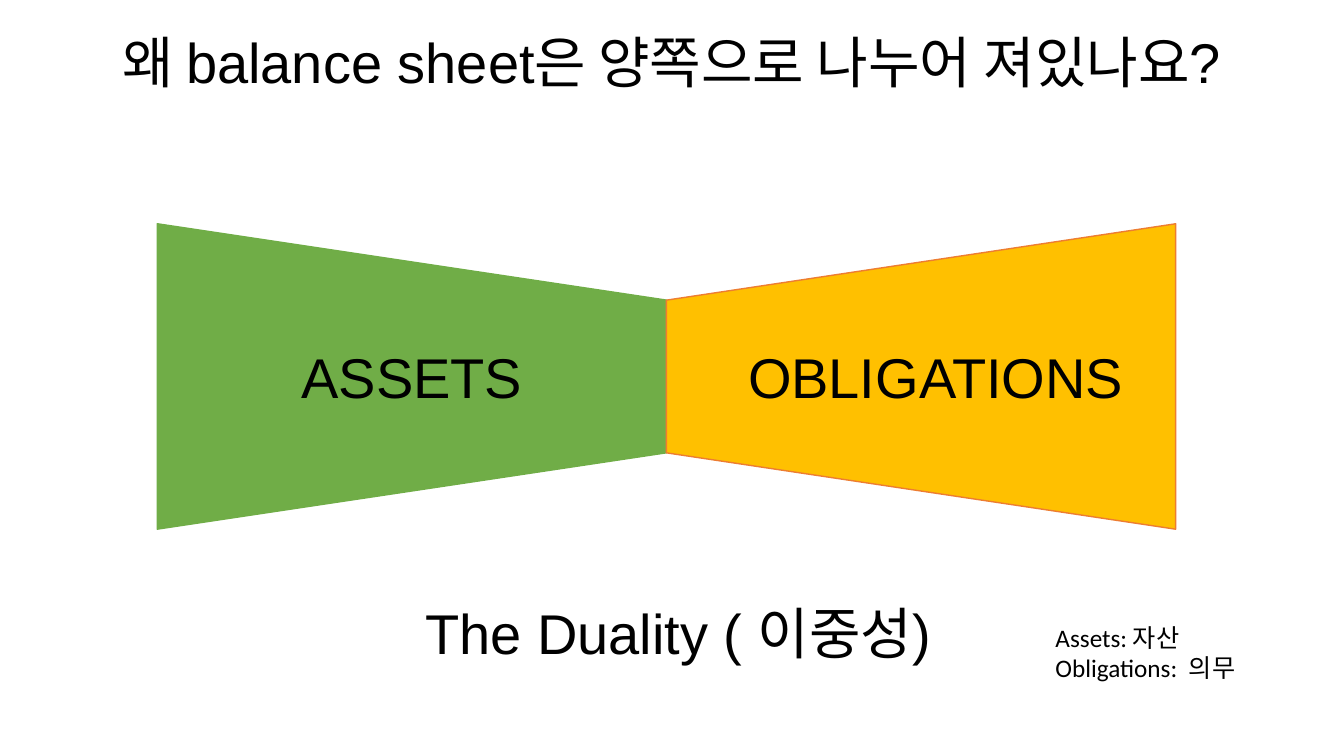
from pptx import Presentation
from pptx.dml.color import RGBColor
from pptx.enum.shapes import MSO_SHAPE
from pptx.enum.text import MSO_ANCHOR, MSO_AUTO_SIZE, PP_ALIGN
from pptx.util import Inches, Pt

COLORS = {
    "text": "000000",
    "assets": "70AD47",
    "obligations": "FFC000",
    "obligations_edge": "ED7D31",
}


def write_text(box, text, size=40, font="Arial", align=PP_ALIGN.CENTER):
    frame = box.text_frame
    frame.text = text
    frame.word_wrap = True
    frame.auto_size = MSO_AUTO_SIZE.NONE
    frame.vertical_anchor = MSO_ANCHOR.TOP
    for paragraph in frame.paragraphs:
        paragraph.alignment = align
        paragraph.line_spacing = 1.0
        for run in paragraph.runs:
            run.font.size = Pt(size)
            run.font.name = font
            run.font.color.rgb = RGBColor.from_string(COLORS["text"])


prs = Presentation()
prs.slide_width = Inches(13.33)
prs.slide_height = Inches(7.5)
slide = prs.slides.add_slide(prs.slide_layouts[5])

# Question as the title
question = slide.shapes.title
question.left, question.top = Inches(0.7), Inches(0.22)
question.width, question.height = Inches(11.92), Inches(0.77)
write_text(question, "왜 balance sheet은 양쪽으로 나누어 져있나요?")

# Two sides of the balance sheet, narrow ends meeting in the middle
sides = [
    (2.57, 90, "assets", "assets"),
    (7.62, 270, "obligations", "obligations_edge"),
]
for left, rotation, fill, edge in sides:
    side = slide.shapes.add_shape(
        MSO_SHAPE.TRAPEZOID, Inches(left), Inches(1.21), Inches(3.03), Inches(5.05)
    )
    side.rotation = rotation
    side.adjustments[0] = 0.25
    side.shadow.inherit = False
    side.fill.solid()
    side.fill.fore_color.rgb = RGBColor.from_string(COLORS[fill])
    side.line.color.rgb = RGBColor.from_string(COLORS[edge])
    side.line.width = Pt(1)

# Side names and the principle below them
captions = [
    ("ASSETS", 2.88, 3.35, 2.41),
    ("OBLIGATIONS", 7.16, 3.35, 4.24),
    ("The Duality ( 이중성)", 4.02, 5.89, 5.41),
]
for text, left, top, width in captions:
    caption = slide.shapes.add_textbox(
        Inches(left), Inches(top), Inches(width), Inches(0.77)
    )
    write_text(caption, text)

# Glossary
glossary = slide.shapes.add_textbox(
    Inches(10.37), Inches(6.12), Inches(2.12), Inches(0.71)
)
write_text(glossary, "Assets: 자산\nObligations:  의무", 18, "Calibri", PP_ALIGN.LEFT)

prs.save("out.pptx")
